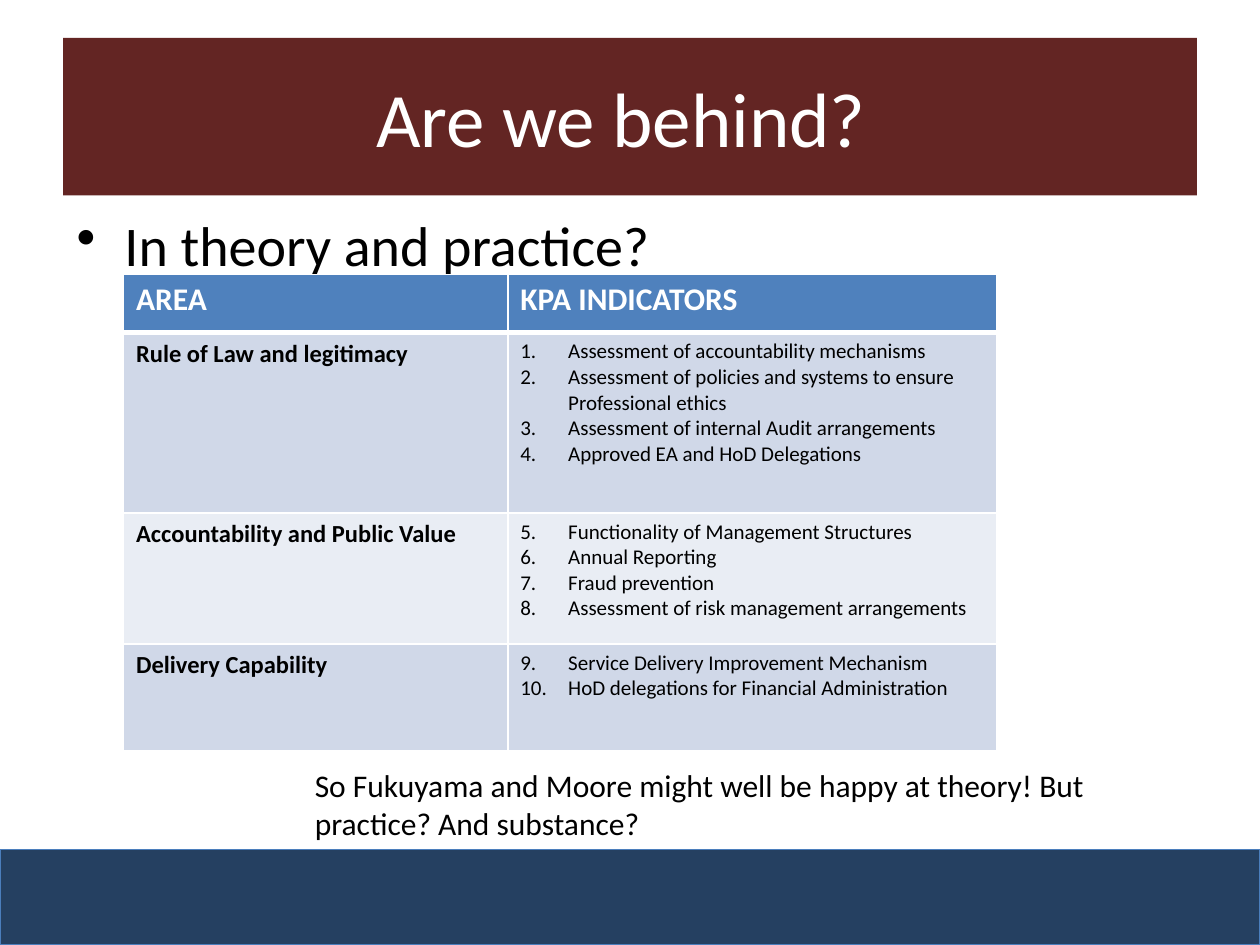
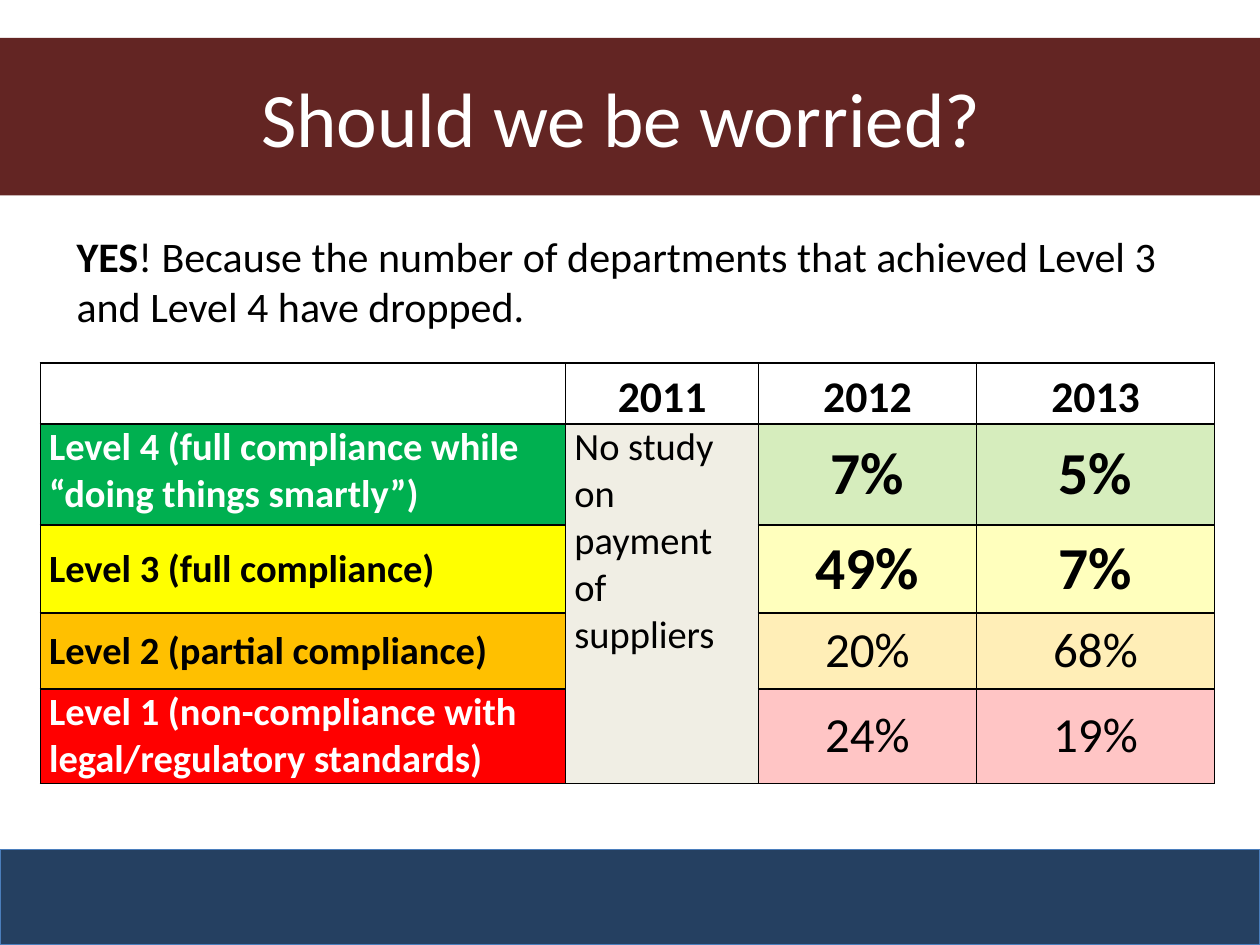
import pptx
import pptx.util
import pptx.dml.color
import pptx.enum.shapes
import pptx.enum.text
import pptx.oxml
import pptx.oxml.ns

Inches = pptx.util.Inches
Pt = pptx.util.Pt
ALIGN = pptx.enum.text.PP_ALIGN
ANCHOR = pptx.enum.text.MSO_ANCHOR
FONT = "Calibri"
BLACK, WHITE = "000000", "FFFFFF"
MAROON, NAVY, EDGE = "632523", "254061", "4B7EBC"
BLUE, PALE, MIST, STONE = "4F81BD", "D0D8E8", "E9EDF4", "F0EEE4"
INDENT = 0.38
DOT = '<a:buChar {} char="•"/>'


def tint(code):
    return pptx.dml.color.RGBColor.from_string(code)


def count(start):
    return f'<a:buAutoNum {{}} type="arabicPeriod" startAt="{start}"/>'


def node(text):
    return pptx.oxml.parse_xml(text.format(pptx.oxml.ns.nsdecls("a")))


class Deck:
    """Holds the shared style and the current slide."""

    def __init__(self):
        self.show = pptx.Presentation()
        self.show.slide_width = Inches(10)
        self.show.slide_height = Inches(7.5)
        self.slide = None

    def start(self, title, left, width):
        self.slide = self.show.slides.add_slide(self.show.slide_layouts[5])
        self.band()
        head = self.slide.shapes.title
        head.left, head.top = Inches(left), Inches(0.3)
        head.width, head.height = Inches(width), Inches(1.25)
        head.fill.solid()
        head.fill.fore_color.rgb = tint(MAROON)
        frame = head.text_frame
        frame.word_wrap = True
        frame.auto_size = pptx.enum.text.MSO_AUTO_SIZE.NONE
        frame.vertical_anchor = ANCHOR.MIDDLE
        self.line(frame.paragraphs[0], [(title, False)], 44, WHITE, ALIGN.CENTER)

    def band(self):
        rect = pptx.enum.shapes.MSO_SHAPE.RECTANGLE
        foot = self.slide.shapes.add_shape(rect, 0, Inches(6.74), Inches(10), Inches(0.76))
        foot.shadow.inherit = False
        foot.fill.solid()
        foot.fill.fore_color.rgb = tint(NAVY)
        foot.line.color.rgb = tint(EDGE)
        foot.line.width = Pt(0.75)

    def line(self, para, runs, size, color=BLACK, align=ALIGN.LEFT, mark=None, space=None):
        if mark:
            props = para._p.get_or_add_pPr()
            props.set("marL", str(Inches(INDENT)))
            props.set("indent", str(-Inches(INDENT)))
            props.append(node(mark))
        para.alignment = align
        if space:
            para.line_spacing = space
        for text, bold in runs:
            run = para.add_run()
            run.text = text
            run.font.name = FONT
            run.font.size = Pt(size)
            run.font.bold = bold
            run.font.color.rgb = tint(color)

    def text(self, at, runs, size, mark=None):
        box = self.slide.shapes.add_textbox(*map(Inches, at))
        box.text_frame.word_wrap = True
        self.line(box.text_frame.paragraphs[0], runs, size, mark=mark)

    def table(self, left, top, cols, rows):
        frame = self.slide.shapes.add_table(
            len(rows), len(cols), Inches(left), Inches(top), Inches(sum(cols)), Inches(sum(rows)))
        grid = frame.table
        grid.first_row = grid.horz_banding = False
        for col, width in zip(grid.columns, cols):
            col.width = Inches(width)
        for row, height in zip(grid.rows, rows):
            row.height = Inches(height)
        return grid

    def cell(self, cell, lines, size, fill=None, edge=BLACK, widths=(1, 1, 1, 1),
             middle=False, tight=False, bold=False, **style):
        props = cell._tc.get_or_add_tcPr()
        for side, width in zip("LRTB", widths):
            props.append(node(
                f'<a:ln{side} {{}} w="{Pt(width)}"><a:solidFill><a:srgbClr val="{edge}"/>'
                f'</a:solidFill></a:ln{side}>'))
        if fill:
            cell.fill.solid()
            cell.fill.fore_color.rgb = tint(fill)
        else:
            cell.fill.background()
        cell.vertical_anchor = ANCHOR.MIDDLE if middle else ANCHOR.TOP
        if tight:
            cell.margin_left = cell.margin_right = Inches(0.07)
            cell.margin_top = cell.margin_bottom = 0
        frame = cell.text_frame
        for spot, words in enumerate(lines):
            para = frame.add_paragraph() if spot else frame.paragraphs[0]
            self.line(para, [(words, bold)], size, **style)


def theory(deck):
    deck.start("Are we behind? ", 0.5, 9)
    deck.text((0.51, 1.62, 9, 4.95), [("In theory and practice?", False)], 32, DOT)
    areas = [
        ("Rule of Law and legitimacy", PALE, [
            "Assessment of accountability mechanisms",
            "Assessment of policies and systems to ensure Professional ethics",
            "Assessment of internal Audit arrangements",
            "Approved EA and HoD Delegations"]),
        ("Accountability and Public Value", MIST, [
            "Functionality of Management Structures",
            "Annual Reporting",
            "Fraud prevention",
            "Assessment of risk management arrangements"]),
        ("Delivery Capability", PALE, [
            "Service Delivery Improvement Mechanism",
            "HoD delegations for Financial Administration"]),
    ]
    grid = deck.table(0.98, 2.18, [3.05, 3.88], [0.46, 1.43, 1.04, 0.85])
    for col, head in enumerate(["AREA", "KPA INDICATORS"]):
        deck.cell(grid.cell(0, col), [head], 18, BLUE, WHITE, (1, 1, 1, 3),
                  bold=True, color=WHITE)
    first = 1
    for row, (area, fill, items) in enumerate(areas, 1):
        widths = (1, 1, 3 if row == 1 else 1, 1)
        deck.cell(grid.cell(row, 0), [area], 14, fill, WHITE, widths, bold=True)
        deck.cell(grid.cell(row, 1), items, 12, fill, WHITE, widths, mark=count(first))
        first += len(items)
    deck.text((2.4, 6.03, 6.69, 0.71), [
        ("So Fukuyama and Moore might well be happy at theory! But practice? And substance?",
         False)], 18)


def levels(deck):
    deck.start("Should we be worried? ", 0, 10)
    ranks = [
        ("Level 4 (full compliance while “doing things smartly”)",
         "00B050", WHITE, "D6EDBD", ["7%", "5%"]),
        ("Level 3 (full compliance)", "FFFF00", BLACK, "FFFFBD", ["49%", "7%"]),
        ("Level 2 (partial compliance)", "FFC000", BLACK, "FFEEB7", ["20%", "68%"]),
        ("Level 1 (non-compliance with legal/regulatory standards)",
         "FF0000", WHITE, "FFC5C5", ["24%", "19%"]),
    ]
    grid = deck.table(0.32, 2.88, [4.17, 1.53, 1.73, 1.89], [0.48, 0.8, 0.7, 0.6, 0.75])
    deck.cell(grid.cell(0, 0), [], 18)
    for col, year in enumerate(["2011", "2012", "2013"], 1):
        deck.cell(grid.cell(0, col), [year], 25, tight=True, bold=True,
                  align=ALIGN.CENTER, space=1.15)
    grid.cell(1, 1).merge(grid.cell(4, 1))
    for row, (label, fill, color, pale, shares) in enumerate(ranks, 1):
        deck.cell(grid.cell(row, 0), [label], 22, fill, middle=color == BLACK,
                  tight=True, bold=True, color=color)
        note = ["No study on payment of suppliers"] if row == 1 else []
        deck.cell(grid.cell(row, 1), note, 22, STONE, tight=True)
        strong = row < 3
        for col, share in enumerate(shares, 2):
            deck.cell(grid.cell(row, col), [share], 34 if strong else 28, pale,
                      middle=True, tight=True, bold=strong, align=ALIGN.CENTER)
    deck.text((0.51, 1.78, 9, 0.79), [
        ("YES", True),
        ("! Because the number of departments that achieved Level 3 and Level 4 have dropped.",
         False)], 24)


def main():
    deck = Deck()
    theory(deck)
    levels(deck)
    deck.show.save("out.pptx")


if __name__ == "__main__":
    main()
